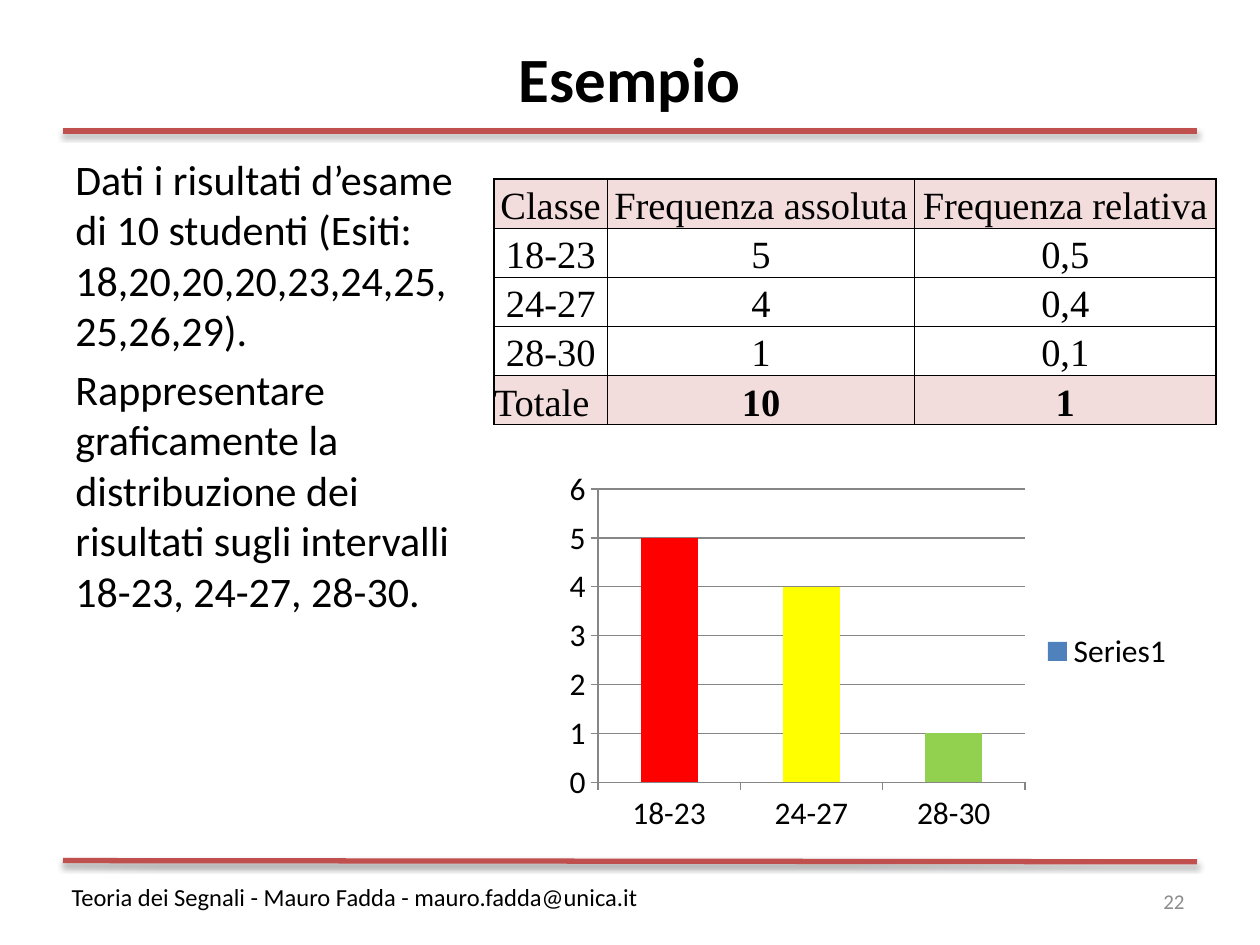
import pptx
import pptx.chart.data
import pptx.dml.color
import pptx.enum.chart
import pptx.enum.shapes
import pptx.enum.text
import pptx.oxml
import pptx.oxml.ns
import pptx.util
from pptx.util import Inches

ALIGN = pptx.enum.text.PP_ALIGN
ANCHOR = pptx.enum.text.MSO_ANCHOR
NAMESPACE = pptx.oxml.ns.nsdecls("a")


def color(hex_value):
    return pptx.dml.color.RGBColor.from_string(hex_value)


def write(frame, text, size=18, font="Calibri", fill="000000", bold=False,
          align=ALIGN.LEFT, anchor=ANCHOR.TOP, gap=0):
    """Fill a text frame, one paragraph per line of text."""
    frame.word_wrap = True
    frame.vertical_anchor = anchor
    for number, line in enumerate(text.split("\n")):
        paragraph = frame.add_paragraph() if number else frame.paragraphs[0]
        paragraph.alignment = align
        paragraph.space_before = pptx.util.Pt(gap if number else 0)
        run = paragraph.add_run()
        run.text = line
        run.font.size = pptx.util.Pt(size)
        run.font.name = font
        run.font.bold = bold
        run.font.color.rgb = color(fill)


class LessonSlide:
    ACCENT = "C0504D"
    TINT = "F2DDDC"
    GRID = "868686"

    def __init__(self, deck):
        self.slide = deck.slides.add_slide(deck.slide_layouts[5])
        self.shapes = self.slide.shapes

    def title(self, text, left, top, width, height):
        heading = self.shapes.title
        heading.left, heading.top = left, top
        heading.width, heading.height = width, height
        write(heading.text_frame, text, size=36, bold=True,
              align=ALIGN.CENTER, anchor=ANCHOR.MIDDLE)

    def text(self, text, left, top, width, height, **style):
        box = self.shapes.add_textbox(left, top, width, height)
        write(box.text_frame, text, **style)

    def rule(self, start_y, end_y):
        divider = self.shapes.add_connector(
            pptx.enum.shapes.MSO_CONNECTOR.STRAIGHT,
            Inches(0.5), start_y, Inches(9.5), end_y)
        divider.line.color.rgb = color(self.ACCENT)
        divider.line.width = pptx.util.Pt(3)
        # Soft shadow straight below the line
        divider._element.spPr.append(pptx.oxml.parse_xml(
            f'<a:effectLst {NAMESPACE}><a:outerShdw blurRad="40000" '
            'dist="23000" dir="5400000" rotWithShape="0">'
            '<a:srgbClr val="000000"><a:alpha val="35000"/></a:srgbClr>'
            '</a:outerShdw></a:effectLst>'))

    def border(self, cell, side, points):
        cell._tc.get_or_add_tcPr().append(pptx.oxml.parse_xml(
            f'<a:ln{side} {NAMESPACE} w="{pptx.util.Pt(points)}">'
            '<a:solidFill><a:srgbClr val="000000"/></a:solidFill>'
            f'</a:ln{side}>'))

    def table(self, rows, left, top, widths, heights):
        grid = self.shapes.add_table(len(rows), len(widths), left, top,
                                     sum(widths), sum(heights)).table
        for column, width in zip(grid.columns, widths):
            column.width = width
        last_row, last_column = len(rows) - 1, len(widths) - 1
        for r, values in enumerate(rows):
            grid.rows[r].height = heights[r]
            for c, value in enumerate(values):
                cell = grid.cell(r, c)
                cell.margin_left = cell.margin_right = 0
                cell.margin_top = cell.margin_bottom = 0
                total = r == last_row
                write(cell.text_frame, value, size=22, font="Times New Roman",
                      bold=total and c > 0,
                      align=ALIGN.LEFT if total and c == 0 else ALIGN.CENTER)
                cell.vertical_anchor = ANCHOR.BOTTOM
                # Outer edges are twice as thick as inner ones
                outer = {"L": c == 0, "R": c == last_column,
                         "T": r == 0, "B": total}
                for side, is_outer in outer.items():
                    self.border(cell, side, 1 if is_outer else 0.5)
                cell.fill.solid()
                cell.fill.fore_color.rgb = color(
                    self.TINT if r in (0, last_row) else "FFFFFF")

    def column_chart(self, categories, values, bar_colors,
                     left, top, width, height):
        data = pptx.chart.data.CategoryChartData()
        data.categories = categories
        data.add_series("Series1", values)
        chart = self.shapes.add_chart(
            pptx.enum.chart.XL_CHART_TYPE.COLUMN_CLUSTERED,
            left, top, width, height, data).chart
        chart.font.size = pptx.util.Pt(18)
        chart.font.name = "Calibri"
        chart.font.color.rgb = color("000000")
        chart.has_title = False
        chart.has_legend = True
        chart.legend.position = pptx.enum.chart.XL_LEGEND_POSITION.RIGHT
        chart.legend.include_in_layout = False

        for axis in (chart.category_axis, chart.value_axis):
            axis.major_tick_mark = pptx.enum.chart.XL_TICK_MARK.OUTSIDE
            axis.format.line.color.rgb = color(self.GRID)
        scale = chart.value_axis
        scale.minimum_scale, scale.maximum_scale, scale.major_unit = 0, 6, 1
        scale.has_major_gridlines = True
        scale.major_gridlines.format.line.color.rgb = color(self.GRID)

        plot = chart.plots[0]
        plot.gap_width = 150
        plot.vary_by_categories = False
        frequencies = plot.series[0]
        frequencies.format.fill.solid()
        frequencies.format.fill.fore_color.rgb = color("4F81BD")
        for index, bar_color in enumerate(bar_colors):
            fill = frequencies.points[index].format.fill
            fill.solid()
            fill.fore_color.rgb = color(bar_color)


def main():
    deck = pptx.Presentation()
    deck.slide_width, deck.slide_height = Inches(10), Inches(7.5)
    lesson = LessonSlide(deck)

    # Footer and dividing rules
    lesson.text("Teoria dei Segnali - Mauro Fadda - mauro.fadda@unica.it",
                Inches(0.47), Inches(6.95), Inches(9.06), Inches(0.34), size=14)
    lesson.rule(Inches(1.04), Inches(1.04))
    lesson.rule(Inches(6.83), Inches(6.84))

    # Title and exercise
    lesson.title("Esempio", Inches(0.5), Inches(0.3), Inches(9), Inches(0.62))
    lesson.text("Dati i risultati d’esame di 10 studenti "
                "(Esiti: 18,20,20,20,23,24,25,25,26,29).\n"
                "Rappresentare graficamente la distribuzione dei risultati "
                "sugli intervalli 18-23, 24-27, 28-30.",
                Inches(0.5), Inches(1.17), Inches(3.25), Inches(5.53),
                size=24, gap=4.8)

    # Frequency table
    classes = ["18-23", "24-27", "28-30"]
    absolute = [5, 4, 1]
    relative = ["0,5", "0,4", "0,1"]
    rows = [["Classe", "Frequenza assoluta", "Frequenza relativa"],
            *zip(classes, map(str, absolute), relative),
            ["Totale", "10", "1"]]
    lesson.table(rows, Inches(3.92), Inches(1.42),
                 [Inches(0.9), Inches(2.44), Inches(2.39)],
                 [Inches(0.39)] * len(rows))

    # Distribution chart
    lesson.column_chart(classes, absolute, ["FF0000", "FFFF00", "92D050"],
                        Inches(4.42), Inches(3.67), Inches(5), Inches(3))

    # Slide number
    lesson.text("22", Inches(7.17), Inches(6.95), Inches(2.33), Inches(0.4),
                size=12, fill="8C8C8C", align=ALIGN.RIGHT, anchor=ANCHOR.MIDDLE)

    deck.save("out.pptx")


if __name__ == "__main__":
    main()
